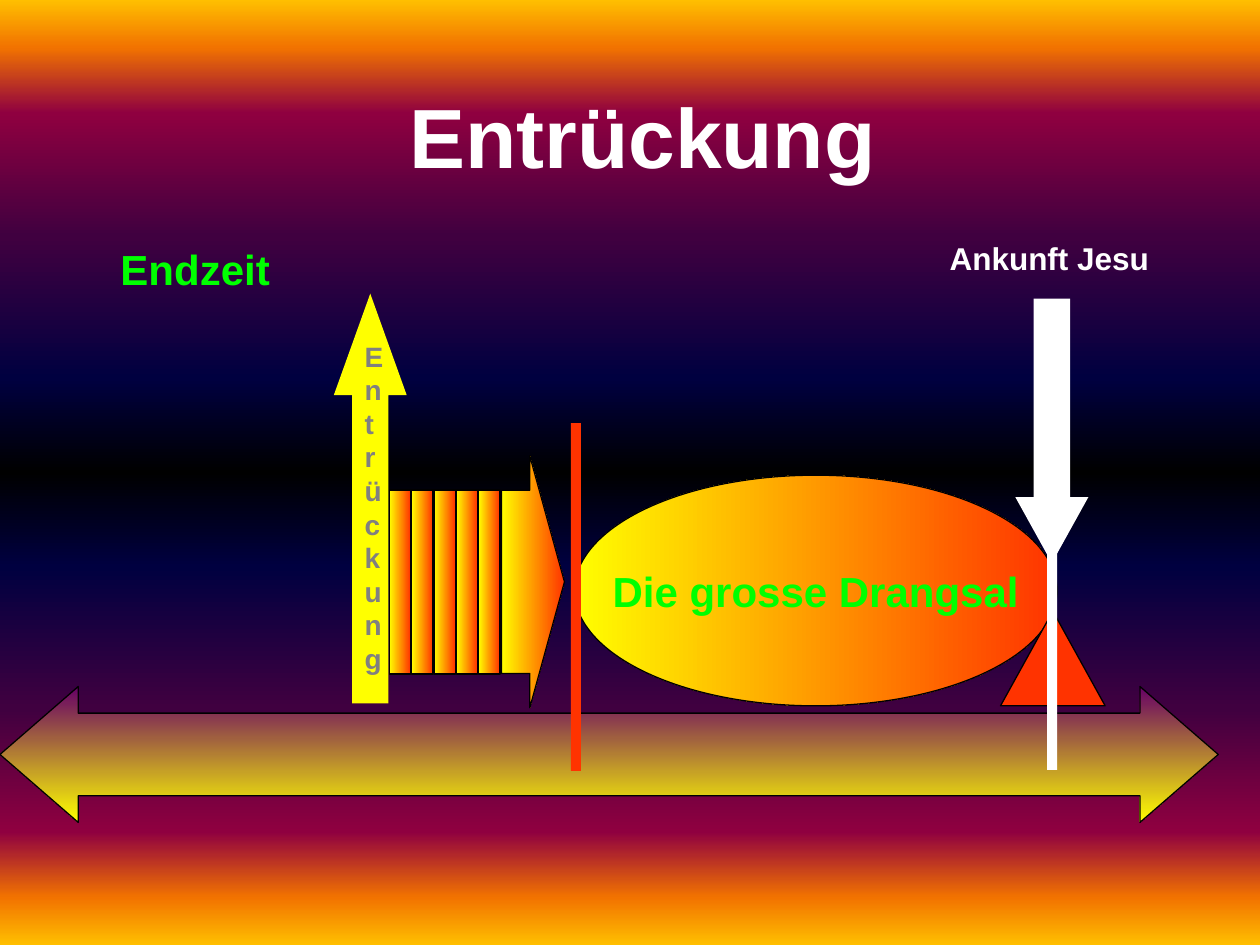
import pptx
import pptx.dml.color
import pptx.enum.shapes
import pptx.enum.text
import pptx.oxml
import pptx.oxml.ns
import pptx.util

Cm = pptx.util.Cm
RGBColor = pptx.dml.color.RGBColor
SHAPE = pptx.enum.shapes.MSO_SHAPE
ANCHOR = pptx.enum.text.MSO_ANCHOR
qn = pptx.oxml.ns.qn

WHITE = RGBColor(0xFF, 0xFF, 0xFF)
BLACK = RGBColor(0x00, 0x00, 0x00)
YELLOW = RGBColor(0xFF, 0xFF, 0x00)
RED = RGBColor(0xFF, 0x33, 0x00)
GREEN = RGBColor(0x00, 0xFF, 0x00)
GREY = RGBColor(0x80, 0x80, 0x80)
VIOLET = RGBColor(0x66, 0x00, 0x66)
GOLD = RGBColor(0xFF, 0xBF, 0x00)
ORANGE = RGBColor(0xF2, 0x73, 0x00)
CRIMSON = RGBColor(0x8F, 0x00, 0x40)
PLUM = RGBColor(0x40, 0x00, 0x40)
NAVY = RGBColor(0x00, 0x00, 0x40)

HALF_SKY = [(0, GOLD), (5, ORANGE), (12, CRIMSON), (25, PLUM), (40, NAVY)]
SKY = HALF_SKY + [(50, BLACK)] + [(100 - at, color) for at, color in reversed(HALF_SKY)]
FIRE = [(0, YELLOW), (100, RED)]
TIME = [(0, VIOLET), (100, YELLOW)]


class SlideBuilder:
    font_name = "Arial"

    def __init__(self, presentation):
        self.slide = presentation.slides.add_slide(presentation.slide_layouts[5])
        self.shapes = self.slide.shapes

    def gradient(self, fill, element, stops, clockwise_angle):
        """Fill with any number of (percent, color) stops."""
        fill.gradient()
        fill.gradient_angle = -clockwise_angle % 360
        stop_list = element.find(".//" + qn("a:gsLst"))
        for stop in list(stop_list):
            stop_list.remove(stop)
        for percent, color in stops:
            stop_list.append(pptx.oxml.parse_xml(
                f'<a:gs {pptx.oxml.ns.nsdecls("a")} pos="{percent * 1000}">'
                f'<a:srgbClr val="{color}"/></a:gs>'))

    def background(self, stops):
        self.gradient(self.slide.background.fill, self.slide._element, stops, 90)

    def add_text(self, shape, text, size, color):
        paragraph = shape.text_frame.paragraphs[0]
        paragraph.alignment = pptx.enum.text.PP_ALIGN.CENTER
        run = paragraph.add_run()
        run.text = text
        run.font.name = self.font_name
        run.font.size = pptx.util.Pt(size)
        run.font.bold = True
        run.font.color.rgb = color

    def title(self, text, left, top, width, height):
        title = self.slide.shapes.title
        title.left, title.top = Cm(left), Cm(top)
        title.width, title.height = Cm(width), Cm(height)
        title.text_frame.vertical_anchor = ANCHOR.MIDDLE
        self.add_text(title, text, 48, WHITE)

    def shape(self, kind, left, top, width, height, fill, angle=0,
              outlined=False, adjustments=()):
        """Add a preset shape; fill is a color or a list of gradient stops."""
        shape = self.shapes.add_shape(kind, Cm(left), Cm(top), Cm(width), Cm(height))
        shape.shadow.inherit = False
        for index, value in enumerate(adjustments):
            shape.adjustments[index] = value
        if isinstance(fill, list):
            self.gradient(shape.fill, shape._element, fill, angle)
        else:
            shape.fill.solid()
            shape.fill.fore_color.rgb = fill
        if outlined:
            shape.line.color.rgb = BLACK
            shape.line.width = pptx.util.Pt(0.75)
        else:
            shape.line.fill.background()
        return shape

    def label(self, text, left, top, width, height, size, color):
        box = self.shapes.add_textbox(Cm(left), Cm(top), Cm(width), Cm(height))
        box.text_frame.word_wrap = True
        box.text_frame.auto_size = pptx.enum.text.MSO_AUTO_SIZE.SHAPE_TO_FIT_TEXT
        self.add_text(box, text, size, color)
        return box

    def stacked_label(self, text, left, top, width, height, size, color):
        """Set upright letters below one another."""
        box = self.label(text, left, top, width, height, size, color)
        box.rotation = 270
        box.text_frame._txBody.bodyPr.set("vert", "eaVert")


def main():
    presentation = pptx.Presentation()
    presentation.slide_width, presentation.slide_height = Cm(25.4), Cm(19.05)
    builder = SlideBuilder(presentation)
    builder.background(SKY)
    builder.title("Entrückung", 0.51, 1.12, 24.89, 3.18)

    builder.shape(SHAPE.LEFT_RIGHT_ARROW, 0, 13.84, 24.56, 2.74, TIME, 90,
                  outlined=True, adjustments=(0.608, 0.576))
    tribulation = builder.shape(SHAPE.OVAL, 11.58, 9.58, 9.73, 4.65, FIRE, outlined=True)
    tribulation.text_frame.word_wrap = False
    tribulation.text_frame.vertical_anchor = ANCHOR.MIDDLE
    builder.add_text(tribulation, "Die grosse Drangsal", 24, GREEN)
    builder.shape(SHAPE.RECTANGLE, 11.51, 8.53, 0.2, 7.01, RED)

    builder.shape(SHAPE.UP_ARROW, 6.73, 5.92, 1.47, 8.26, YELLOW, adjustments=(0.5, 1.393))
    builder.stacked_label("Entrückung", 3.76, 10.19, 7.32, 0.36, 16, GREY)

    for index in range(5):
        builder.shape(SHAPE.RECTANGLE, 7.85 + 0.45 * index, 9.88, 0.43, 3.71,
                      FIRE, outlined=True)
    builder.shape(SHAPE.RIGHT_ARROW, 10.11, 9.19, 1.27, 5.08, FIRE,
                  outlined=True, adjustments=(0.727, 0.55))

    builder.shapes = builder.slide.shapes.add_group_shape().shapes
    builder.shape(SHAPE.ISOSCELES_TRIANGLE, 20.17, 12.32, 2.11, 1.91, RED, outlined=True)
    builder.shape(SHAPE.DOWN_ARROW, 20.47, 6.02, 1.47, 5.33, WHITE, adjustments=(0.5, 0.902))
    builder.shape(SHAPE.RECTANGLE, 21.11, 8.51, 0.2, 7.01, WHITE)
    builder.label("Ankunft Jesu", 18.08, 4.7, 6.15, 1.02, 18, WHITE)

    builder.shapes = builder.slide.shapes
    builder.label("Endzeit", 1.37, 4.78, 5.13, 1.27, 24, GREEN)
    presentation.save("out.pptx")


if __name__ == "__main__":
    main()
